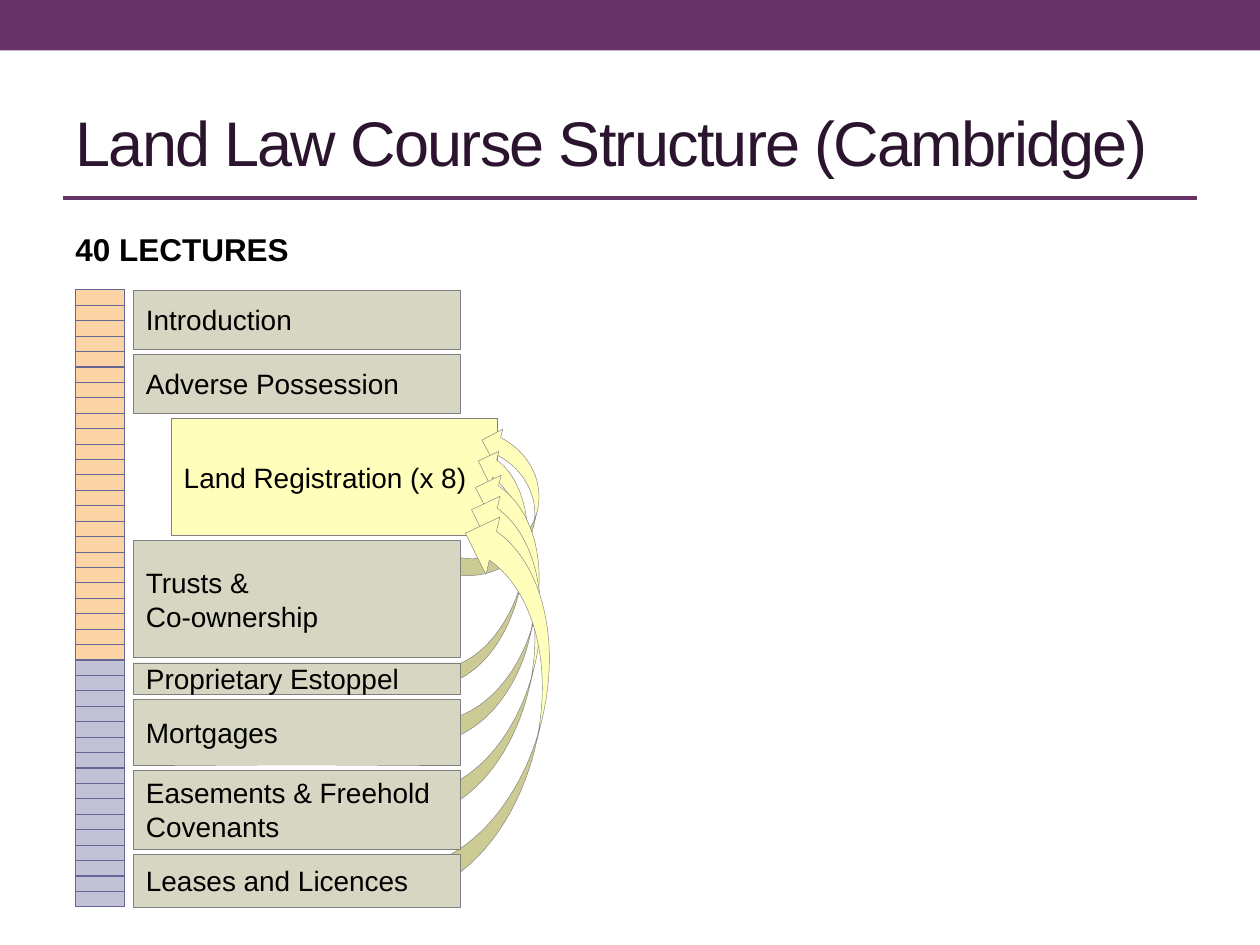
import lxml.etree
import pptx
import pptx.dml.color
import pptx.enum.shapes
import pptx.enum.text
import pptx.oxml.ns
import pptx.util

Inches = pptx.util.Inches
Pt = pptx.util.Pt
qn = pptx.oxml.ns.qn
SHAPES = pptx.enum.shapes.MSO_SHAPE

COLORS = {
    "purple": "663366",
    "title": "2B142D",
    "text": "000000",
    "topic": "D6D6C2",
    "registration": "FFFEBA",
    "outline": "808080",
    "grid": "666699",
    "first_term": "FCD3A5",
    "second_term": "C2C2D6",
}
TOP, HEIGHT = 2.3, 4.9
LECTURES, FIRST_TERM_LECTURES = 40, 24
TOPIC_LEFT, TOPIC_WIDTH, TOPIC_GAP = 1.06, 2.59, 0.04
REGISTRATION_INDENT = 0.3
TOPICS = [
    (["Introduction"], 0.47),
    (["Adverse Possession"], 0.47),
    (["Land Registration (x 8)"], 0.93),
    (["Trusts &", "Co-ownership"], 0.93),
    (["Proprietary Estoppel"], 0.25),
    (["Mortgages"], 0.52),
    (["Easements & Freehold Covenants"], 0.63),
    (["Leases and Licences"], 0.42),
]
REGISTRATION = 2
ARROWS = [
    (3.37, 3.74, 1.23, 0.56),
    (2.89, 4.26, 1.96, 0.56),
    (2.77, 4.52, 2.24, 0.7),
    (2.51, 4.86, 2.68, 0.78),
    (2.24, 5.19, 3.18, 0.94),
]
ARROW_ROTATION = 283.7


def color(name):
    """Return the named colour."""
    return pptx.dml.color.RGBColor.from_string(COLORS[name])


def write_lines(text_frame, lines, size, color_name, bold=False):
    """Write one left-aligned paragraph for each line and return the runs."""
    text_frame.word_wrap = True
    runs = []
    for index, line in enumerate(lines):
        paragraph = text_frame.add_paragraph() if index else text_frame.paragraphs[0]
        paragraph.alignment = pptx.enum.text.PP_ALIGN.LEFT
        run = paragraph.add_run()
        run.text = line
        run.font.name = "Arial"
        run.font.size = Pt(size)
        run.font.bold = bold
        run.font.color.rgb = color(color_name)
        runs.append(run)
    return runs


def add_filled_shape(slide, kind, box, fill, outline=None):
    """Add a flat preset shape with an optional hairline outline."""
    shape = slide.shapes.add_shape(kind, *map(Inches, box))
    shape.shadow.inherit = False
    shape.fill.solid()
    shape.fill.fore_color.rgb = color(fill)
    if outline:
        shape.line.color.rgb = color(outline)
        shape.line.width = Pt(0.25)
    else:
        shape.line.fill.background()
    return shape


def add_title(slide, text):
    """Format the title placeholder and draw the rule below it."""
    title = slide.shapes.title
    title.left, title.top, title.width, title.height = map(Inches, (0.5, 0.58, 9, 1.08))
    title.text_frame.auto_size = pptx.enum.text.MSO_AUTO_SIZE.NONE
    title.text_frame.vertical_anchor = pptx.enum.text.MSO_ANCHOR.MIDDLE
    run = write_lines(title.text_frame, [text], 36, "title")[0]
    run.font._element.set("spc", "-100")
    rule = slide.shapes.add_connector(
        pptx.enum.shapes.MSO_CONNECTOR.STRAIGHT, *map(Inches, (0.5, 1.57, 9.5, 1.57))
    )
    rule.line.color.rgb = color("purple")
    rule.line.width = Pt(2.08)
    lxml.etree.SubElement(rule._element.spPr, qn("a:effectLst"))


def add_cell_borders(cell):
    """Give a cell a thin line on all four sides."""
    properties = cell._tc.get_or_add_tcPr()
    for index, side in enumerate(("lnL", "lnR", "lnT", "lnB")):
        line = lxml.etree.Element(qn("a:" + side), w=str(Pt(0.75)))
        fill = lxml.etree.SubElement(line, qn("a:solidFill"))
        lxml.etree.SubElement(fill, qn("a:srgbClr"), val=COLORS["grid"])
        properties.insert(index, line)


def add_lecture_scale(slide):
    """Add a table with one row per lecture, coloured by term."""
    box = map(Inches, (0.6, TOP, 0.39, HEIGHT))
    table = slide.shapes.add_table(LECTURES, 1, *box).table
    table.first_row = False
    table.horz_banding = False
    for index, row in enumerate(table.rows):
        row.height = Inches(HEIGHT / LECTURES)
        cell = row.cells[0]
        cell.margin_left = cell.margin_right = cell.margin_top = cell.margin_bottom = 0
        cell.fill.solid()
        term = "first_term" if index < FIRST_TERM_LECTURES else "second_term"
        cell.fill.fore_color.rgb = color(term)
        add_cell_borders(cell)
        paragraph = cell.text_frame.paragraphs[0]
        lxml.etree.SubElement(paragraph._p, qn("a:endParaRPr"), sz="100")


def add_heading(slide, text):
    """Add the bold heading above the scale."""
    text_box = slide.shapes.add_textbox(*map(Inches, (0.5, 1.78, 3.16, 0.4)))
    text_box.text_frame.margin_left = Inches(0.1)
    write_lines(text_box.text_frame, [text], 18, "text", bold=True)


def add_topic(slide, lines, left, top, height, fill):
    """Add one topic block."""
    box = (left, top, TOPIC_WIDTH, height)
    topic = add_filled_shape(slide, SHAPES.RECTANGLE, box, fill, "outline")
    topic.text_frame.vertical_anchor = pptx.enum.text.MSO_ANCHOR.MIDDLE
    write_lines(topic.text_frame, lines, 16, "text")


def add_arrows(slide):
    """Add the curved arrows that lead back to land registration."""
    for box in ARROWS:
        arrow = add_filled_shape(slide, SHAPES.CURVED_UP_ARROW, box, "registration", "outline")
        arrow.rotation = ARROW_ROTATION


def add_topics(slide):
    """Stack the topics, with the arrows behind those after registration."""
    top = TOP
    for index, (lines, height) in enumerate(TOPICS):
        if index == REGISTRATION:
            left = TOPIC_LEFT + REGISTRATION_INDENT
            add_topic(slide, lines, left, top, height, "registration")
            add_arrows(slide)
        else:
            add_topic(slide, lines, TOPIC_LEFT, top, height, "topic")
        top += height + TOPIC_GAP


def main():
    """Build the course structure slide."""
    presentation = pptx.Presentation()
    presentation.slide_width = Inches(10)
    presentation.slide_height = Inches(7.5)
    slide = presentation.slides.add_slide(presentation.slide_layouts[5])
    add_filled_shape(slide, SHAPES.RECTANGLE, (0, 0, 10, 0.4), "purple")
    add_title(slide, "Land Law Course Structure (Cambridge)")
    add_lecture_scale(slide)
    add_heading(slide, "40 LECTURES")
    add_topics(slide)
    presentation.save("out.pptx")


if __name__ == "__main__":
    main()
